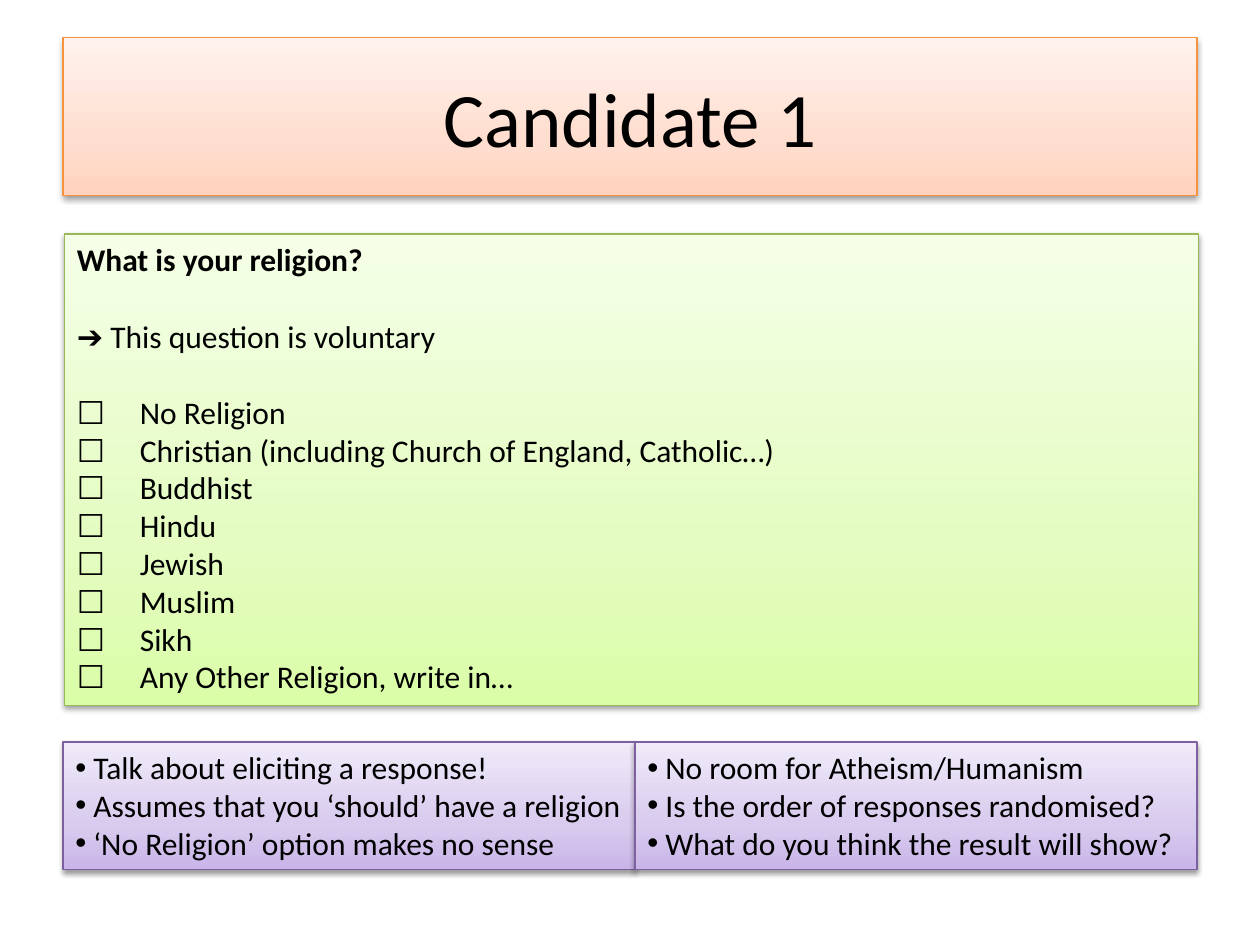
from copy import deepcopy
from dataclasses import dataclass, field

from lxml.etree import SubElement
from pptx import Presentation
from pptx.dml.color import RGBColor
from pptx.enum.shapes import MSO_SHAPE as Preset
from pptx.enum.text import MSO_ANCHOR as Anchor, PP_ALIGN as Align
from pptx.oxml.ns import qn
from pptx.util import Cm, Pt


@dataclass(frozen=True)
class Palette:
    stops: tuple[str, str, str]
    line: str


@dataclass(frozen=True)
class Theme:
    orange: Palette = Palette(("FFD2BD", "FFDED0", "FFF2ED"), "F69240")
    green: Palette = Palette(("DAFDA7", "E4FCC2", "F5FFE7"), "98B955")
    purple: Palette = Palette(("C9B5E8", "D8CBEE", "F0EAF9"), "7D60A0")
    stop_positions: tuple[float, float, float] = (0, 0.35, 1)
    text: str = "000000"
    shadow: str = "000000"
    font: str = "Calibri"
    arrow_font: str = "Arial"
    checkbox_font: str = "Noto Sans CJK JP"
    title_size: int = 44
    body_size: int = 18
    line_width: float = 0.75


THEME = Theme()


@dataclass(frozen=True)
class TextRun:
    text: str
    font: str = THEME.font
    size: int = THEME.body_size
    bold: bool = False


@dataclass(frozen=True)
class Line:
    runs: list[TextRun]
    space_after: int = 0
    bullet: bool = False


@dataclass(frozen=True)
class Panel:
    left: float
    top: float
    width: float
    height: float
    palette: Palette
    lines: list[Line] = field(default_factory=list)
    align: Align = Align.LEFT
    anchor: Anchor = Anchor.TOP
    right_inset: float = 0.25


def fill_gradient(shape, palette: Palette) -> None:
    shape.fill.gradient()
    shape.fill.gradient_angle = 90
    stop_list = shape._element.spPr.find(".//" + qn("a:gsLst"))
    stop_list.insert(1, deepcopy(stop_list[0]))
    for stop, position, color in zip(
        shape.fill.gradient_stops, THEME.stop_positions, palette.stops
    ):
        stop.position = position
        stop.color.rgb = RGBColor.from_string(color)


def add_shadow(shape) -> None:
    shape.shadow.inherit = False
    effects = shape._element.spPr.find(qn("a:effectLst"))
    shadow = SubElement(
        effects, qn("a:outerShdw"), blurRad=str(Pt(3.1)), dist=str(Pt(1.6)),
        dir="5400000", rotWithShape="0",
    )
    color = SubElement(shadow, qn("a:srgbClr"), val=THEME.shadow)
    SubElement(color, qn("a:alpha"), val="38000")


def add_run(paragraph, text_run: TextRun) -> None:
    run = paragraph.add_run()
    run.text = text_run.text
    run.font.name = text_run.font
    run.font.size = Pt(text_run.size)
    run.font.bold = text_run.bold
    run.font.color.rgb = RGBColor.from_string(THEME.text)
    SubElement(run._r.get_or_add_rPr(), qn("a:ea"), typeface=text_run.font)


def add_bullet(paragraph) -> None:
    properties = paragraph._p.get_or_add_pPr()
    SubElement(properties, qn("a:buFont"), typeface="Arial")
    SubElement(properties, qn("a:buChar"), char="•")


def draw_panel(slide, panel: Panel) -> None:
    shape = slide.shapes.add_shape(
        Preset.RECTANGLE,
        Cm(panel.left), Cm(panel.top), Cm(panel.width), Cm(panel.height),
    )
    fill_gradient(shape, panel.palette)
    shape.line.color.rgb = RGBColor.from_string(panel.palette.line)
    shape.line.width = Pt(THEME.line_width)
    add_shadow(shape)
    frame = shape.text_frame
    frame.word_wrap = True
    frame.vertical_anchor = panel.anchor
    frame.margin_right = Cm(panel.right_inset)
    for index, line in enumerate(panel.lines):
        paragraph = frame.add_paragraph() if index else frame.paragraphs[0]
        paragraph.alignment = panel.align
        paragraph.space_after = Pt(line.space_after)
        if line.bullet:
            add_bullet(paragraph)
        for text_run in line.runs:
            add_run(paragraph, text_run)


def bullet_lines(*texts: str) -> list[Line]:
    return [Line([TextRun(f" {text}")], bullet=True) for text in texts]


def checkbox_line(answer: str) -> Line:
    return Line([TextRun("☐\t", THEME.checkbox_font), TextRun(answer)])


ANSWERS = [
    "No Religion",
    "Christian (including Church of England, Catholic…)",
    "Buddhist",
    "Hindu",
    "Jewish",
    "Muslim",
    "Sikh",
    "Any Other Religion, write in…",
]

QUESTION = [
    Line([TextRun("What is your religion?", bold=True)], space_after=22),
    Line(
        [TextRun("➔", THEME.arrow_font), TextRun(" This question is voluntary")],
        space_after=22,
    ),
    *map(checkbox_line, ANSWERS),
]

PANELS = [
    Panel(
        1.27, 0.76, 22.86, 3.18, THEME.orange,
        [Line([TextRun("Candidate 1", size=THEME.title_size)])],
        Align.CENTER, Anchor.MIDDLE,
    ),
    Panel(1.3, 4.72, 22.86, 9.5, THEME.green, QUESTION),
    Panel(
        1.27, 14.96, 11.53, 2.57, THEME.purple,
        bullet_lines(
            "Talk about eliciting a response!",
            "Assumes that you ‘should’ have a religion",
            "‘No Religion’ option makes no sense",
        ),
        right_inset=0,
    ),
    Panel(
        12.8, 14.96, 11.33, 2.57, THEME.purple,
        bullet_lines(
            "No room for Atheism/Humanism",
            "Is the order of responses randomised?",
            "What do you think the result will show?",
        ),
        right_inset=0,
    ),
]


def main() -> None:
    presentation = Presentation()
    presentation.slide_width = Cm(25.4)
    presentation.slide_height = Cm(19.05)
    slide = presentation.slides.add_slide(presentation.slide_layouts[6])
    for panel in PANELS:
        draw_panel(slide, panel)
    presentation.save("out.pptx")


if __name__ == "__main__":
    main()
